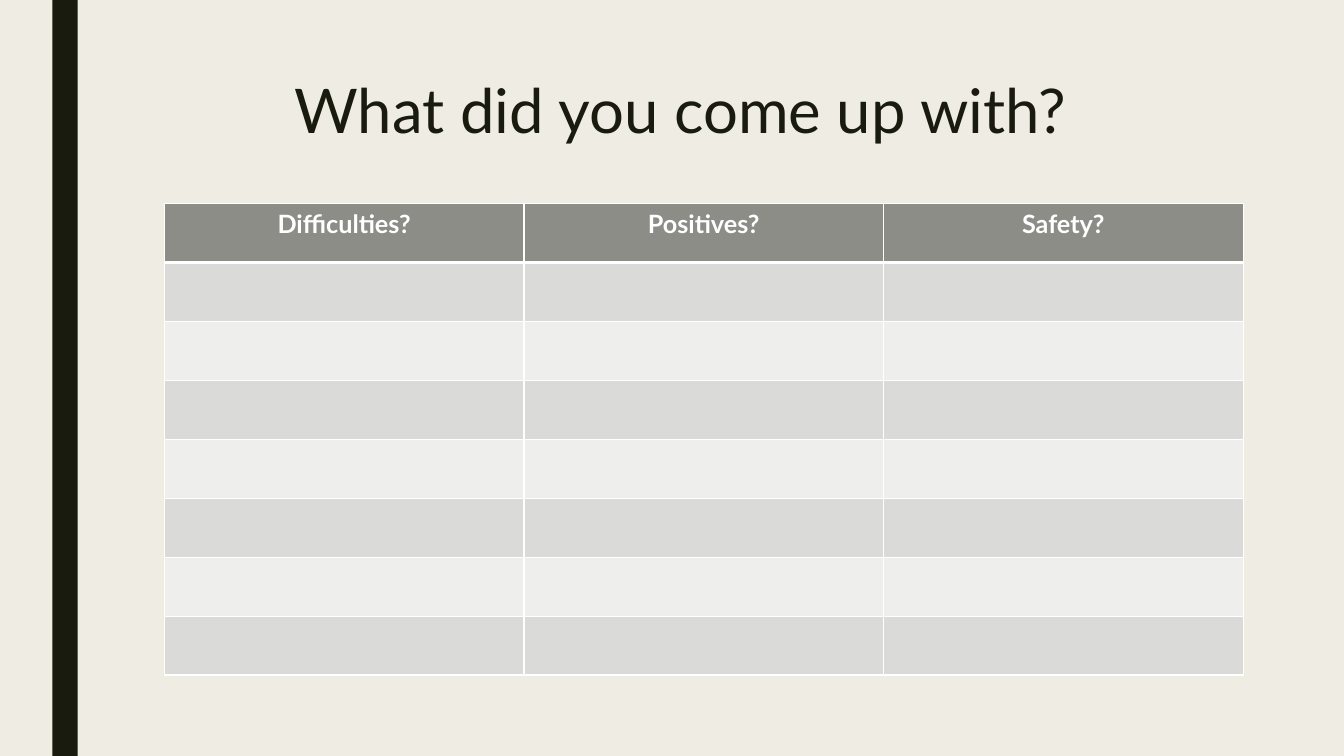
from lxml.etree import SubElement
from pptx import Presentation
from pptx.dml.color import RGBColor
from pptx.enum.shapes import MSO_SHAPE
from pptx.enum.text import MSO_ANCHOR, PP_ALIGN
from pptx.oxml.ns import qn
from pptx.util import Inches, Pt

FONT = "Lato"
INK, PAPER, WHITE = "191B0E", "EFEDE3", "FFFFFF"
HEADER_FILL, BANDS = "8C8D86", ("EEEEED", "DADBD9")
HEADINGS = ("Difficulties?", "Positives?", "Safety?")
ROW_COUNT = 8


def paint(color_owner, color):
    """Give a fill a solid colour from a hex string."""
    color_owner.solid()
    color_owner.fore_color.rgb = RGBColor.from_string(color)


def style_paragraph(paragraph, size, color, bold=False):
    """Centre a paragraph and set its font."""
    paragraph.alignment = PP_ALIGN.CENTER
    font = paragraph.font
    font.name, font.size, font.bold = FONT, Pt(size), bold
    paint(font.fill, color)


def add_side_bar(slide):
    """Draw the dark full-height bar at the left."""
    bar = slide.shapes.add_shape(
        MSO_SHAPE.RECTANGLE, Inches(0.52), 0, Inches(0.25), Inches(7.5))
    bar.shadow.inherit = False
    paint(bar.fill, INK)
    bar.line.fill.background()


def set_title(slide, wording):
    """Place and format the title placeholder."""
    title = slide.shapes.title
    title.left, title.top = Inches(1.5), Inches(0.75)
    title.width, title.height = Inches(10.5), Inches(1.62)
    title.text_frame.text = wording
    title.text_frame.vertical_anchor = MSO_ANCHOR.TOP
    heading = title.text_frame.paragraphs[0]
    heading.line_spacing = 0.89
    style_paragraph(heading, 44, INK)


def set_borders(cell, top, bottom):
    """Draw white cell borders with the given top and bottom widths."""
    properties = cell._tc.get_or_add_tcPr()
    widths = {"a:lnL": 1, "a:lnR": 1, "a:lnT": top, "a:lnB": bottom}
    for position, (side, width) in enumerate(widths.items()):
        border = SubElement(properties, qn(side), w=str(Pt(width)))
        stroke = SubElement(border, qn("a:solidFill"))
        SubElement(stroke, qn("a:srgbClr"), val=WHITE)
        properties.insert(position, border)


def add_answer_table(slide):
    """Add the banded answer grid under its headings."""
    table = slide.shapes.add_table(
        ROW_COUNT, len(HEADINGS), Inches(1.63), Inches(2.02),
        Inches(10.7), Inches(4.68)).table
    for row_number, row in enumerate(table.rows):
        is_header = row_number == 0
        for heading, cell in zip(HEADINGS, row.cells):
            paint(cell.fill, HEADER_FILL if is_header else BANDS[row_number % 2])
            set_borders(cell, 3 if row_number == 1 else 1, 3 if is_header else 1)
            if is_header:
                cell.text = heading
                style_paragraph(cell.text_frame.paragraphs[0], 18, WHITE, True)


def main():
    """Build and save the slide."""
    deck = Presentation()
    deck.slide_width, deck.slide_height = Inches(13.33), Inches(7.5)
    slide = deck.slides.add_slide(deck.slide_layouts[5])
    paint(slide.background.fill, PAPER)
    add_side_bar(slide)
    set_title(slide, "What did you come up with?")
    add_answer_table(slide)
    deck.save("out.pptx")


if __name__ == "__main__":
    main()
